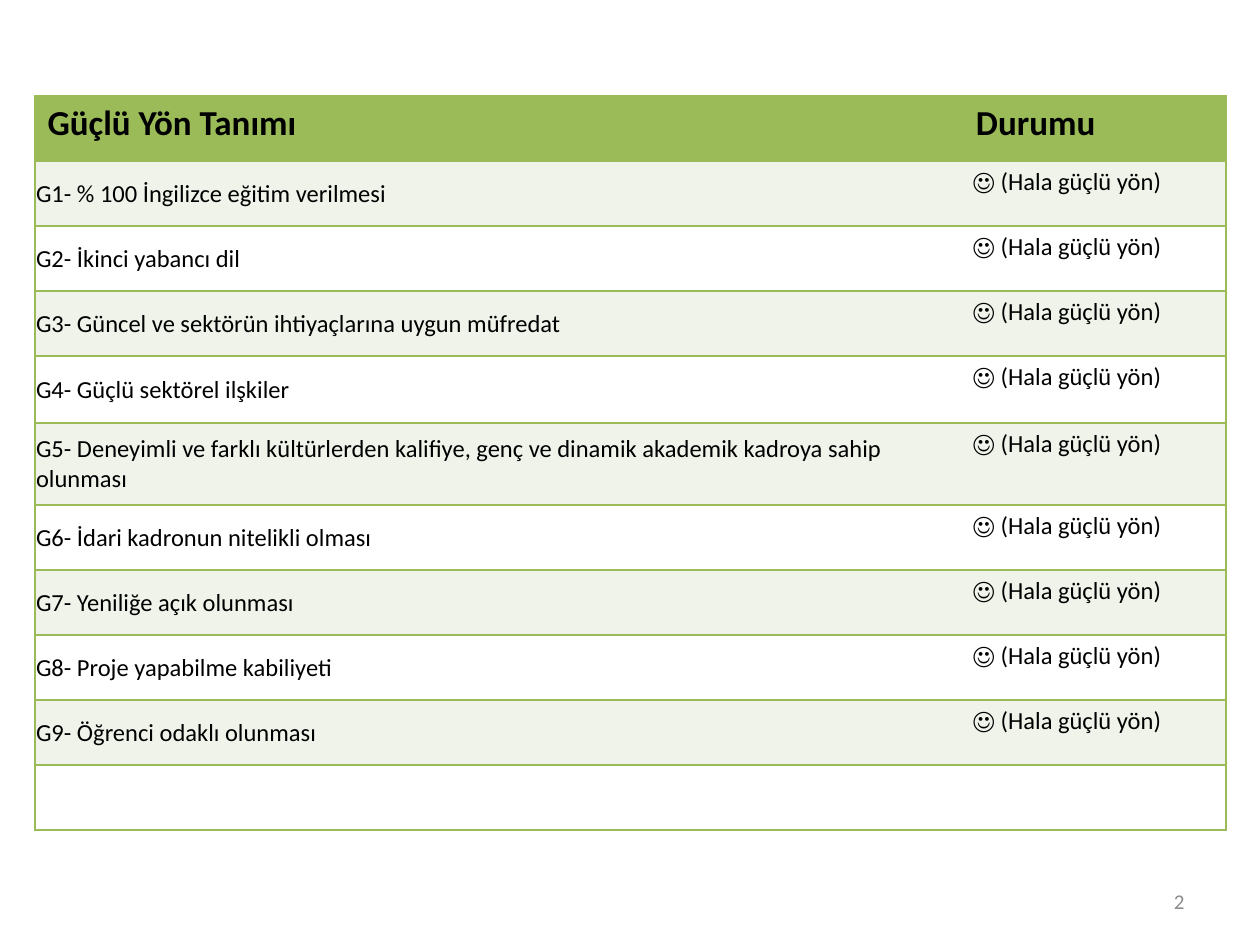
import pptx
import pptx.dml.color
import pptx.enum.text
import pptx.oxml
import pptx.oxml.ns
import pptx.util

EMU_PER_PX = 914400 // 126
ALIGN = pptx.enum.text.PP_ALIGN
ANCHOR = pptx.enum.text.MSO_ANCHOR

STRENGTHS = [
    "G1- % 100 İngilizce eğitim verilmesi",
    "G2- İkinci yabancı dil",
    "G3- Güncel ve sektörün ihtiyaçlarına uygun müfredat",
    "G4- Güçlü sektörel ilşkiler",
    "G5- Deneyimli ve farklı kültürlerden kalifiye, genç ve dinamik "
    "akademik kadroya sahip olunması",
    "G6- İdari kadronun nitelikli olması",
    "G7- Yeniliğe açık olunması",
    "G8- Proje yapabilme kabiliyeti",
    "G9- Öğrenci odaklı olunması",
]
STATUS = "☺ (Hala güçlü yön)"
COLUMN_WIDTHS = [873, 318]
ROW_HEIGHTS = [65, 65, 65, 65, 67, 82, 65, 65, 65, 65, 65]


def px(length):
    return pptx.util.Emu(length * EMU_PER_PX)


def color(hex_code):
    return pptx.dml.color.RGBColor.from_string(hex_code)


class StrengthsSlide:
    font_name = "Calibri"
    green = "9BBB59"
    stripe = "EFF3EA"
    white = "FFFFFF"
    black = "000000"
    gray = "8C8C8C"

    def __init__(self, slide):
        self.slide = slide

    def set_text(self, frame, text, size, hex_code, align=ALIGN.LEFT, bold=False):
        frame.word_wrap = True
        paragraph = frame.paragraphs[0]
        paragraph.text = text
        paragraph.alignment = align
        font = paragraph.font
        font.name = self.font_name
        font.size = pptx.util.Pt(size)
        font.bold = bold
        font.color.rgb = color(hex_code)

    def text(self, left, top, width, height, text, size, hex_code, align):
        box = self.slide.shapes.add_textbox(px(left), px(top), px(width), px(height))
        box.text_frame.vertical_anchor = ANCHOR.MIDDLE
        self.set_text(box.text_frame, text, size, hex_code, align)

    def table(self, left, top, widths, heights):
        table = self.slide.shapes.add_table(
            len(heights), len(widths), px(left), px(top), px(sum(widths)), px(sum(heights))
        ).table
        for column, width in zip(table.columns, widths):
            column.width = px(width)
        for row, height in zip(table.rows, heights):
            row.height = px(height)
        return table

    def paint_cell(self, cell, fill, lined_sides):
        """Line the given sides (L, R, T, B), clear the others, then fill."""
        properties = cell._tc.get_or_add_tcPr()
        for side in "LRTB":
            paint = "<a:noFill/>"
            if side in lined_sides:
                paint = f'<a:solidFill><a:srgbClr val="{self.green}"/></a:solidFill>'
            properties.append(pptx.oxml.parse_xml(
                f'<a:ln{side} {pptx.oxml.ns.nsdecls("a")} w="12700">{paint}</a:ln{side}>'
            ))
        cell.fill.solid()
        cell.fill.fore_color.rgb = color(fill)

    def strengths_table(self):
        table = self.table(35, 96, COLUMN_WIDTHS, ROW_HEIGHTS)
        for index, row in enumerate(table.rows):
            fill = self.stripe if index % 2 else self.white
            if index == 0:
                fill = self.green
            for cell, sides in zip(row.cells, ("LTB", "RTB")):
                self.paint_cell(cell, fill, sides)

        for column, heading in enumerate(("Güçlü Yön Tanımı", "Durumu")):
            self.set_text(table.cell(0, column).text_frame, heading, 20, self.black, bold=True)
        table.cell(0, 1).margin_left = px(68)

        for row, strength in enumerate(STRENGTHS, start=1):
            description, status = table.cell(row, 0), table.cell(row, 1)
            description.vertical_anchor = ANCHOR.MIDDLE
            description.margin_left = description.margin_right = px(1)
            description.margin_top = px(1)
            description.margin_bottom = 0
            self.set_text(description.text_frame, strength, 14, self.black)
            self.set_text(status.text_frame, STATUS, 14, self.black, ALIGN.CENTER)


def main():
    presentation = pptx.Presentation()
    presentation.slide_width = pptx.util.Inches(10)
    presentation.slide_height = pptx.util.Inches(7.5)
    page = StrengthsSlide(presentation.slides.add_slide(presentation.slide_layouts[6]))
    page.text(903, 876, 294, 50, "2", 12, page.gray, ALIGN.RIGHT)
    page.strengths_table()
    presentation.save("out.pptx")


if __name__ == "__main__":
    main()
